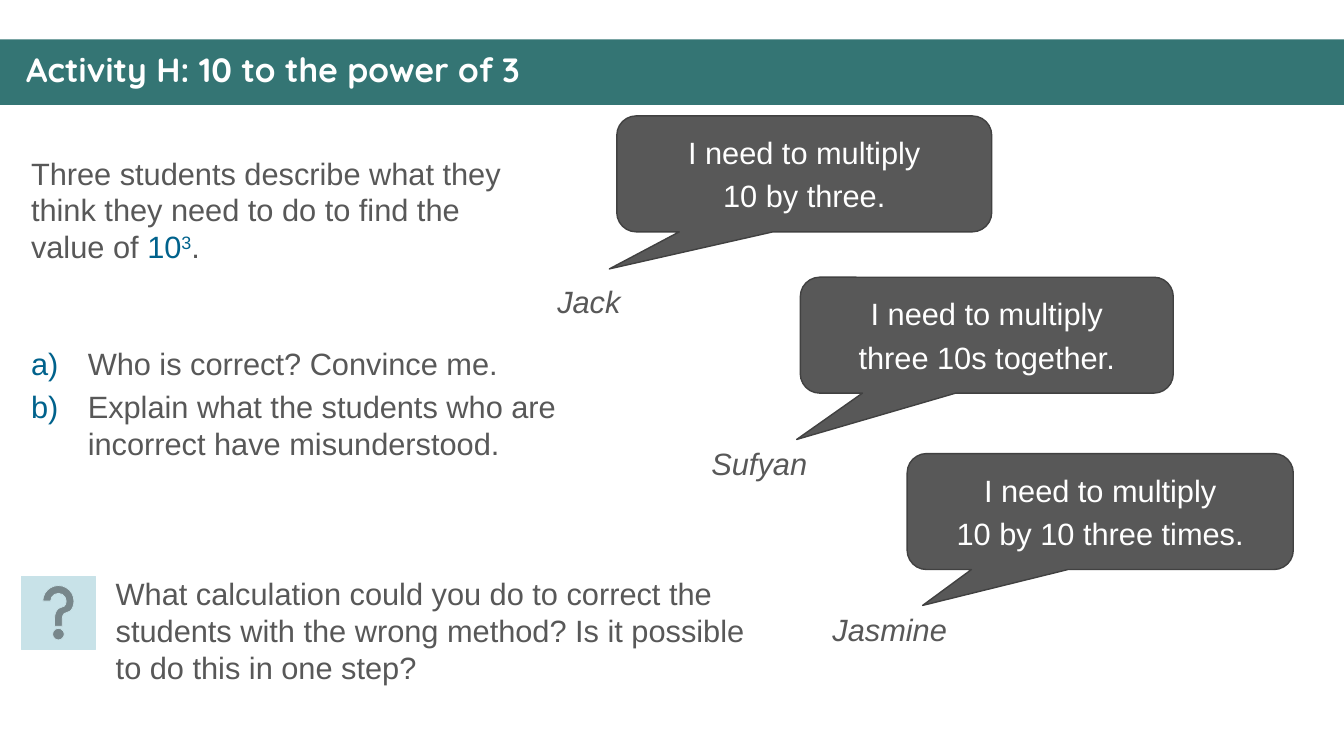
from pptx import Presentation
from pptx.dml.color import RGBColor
from pptx.enum import shapes, text
from pptx.oxml.ns import qn
from pptx.util import Pt
from lxml import etree

# Content
TITLE = "Activity H: 10 to the power of 3"
# speech lines, bubble left/top/width, pointer x/y, speaker, name left/top/width
STUDENTS = [
    (("I need to multiply", "10 by three."), (440.6, 82.8, 267.8),
     (-0.52, 0.82), "Jack", (391, 198.7, 60.5)),
    (("I need to multiply", "three 10s together."), (571.7, 198, 266.4),
     (-0.51, 0.9), "Sufyan", (501.1, 313.9, 83.5)),
    (("I need to multiply", "10 by 10 three times."), (648, 324, 275.8),
     (-0.46, 0.81), "Jasmine", (587.5, 432.7, 97.2)),
]
# each paragraph is a list of (words, colour, baseline) runs
INTRO = [[("Three students describe what they think they need to do to find the value of ", "grey", 0),
          ("10", "blue", 0), ("3", "blue", 30000), (".", "grey", 0)]]
QUESTIONS = [[("Who is correct? Convince me.", "grey", 0)],
             [("Explain what the students who are incorrect have misunderstood.", "grey", 0)]]
EXTENSION = [[("What calculation could you do to correct the students with the wrong method? "
               "Is it possible to do this in one step?", "grey", 0)]]

COLOURS = {"teal": "347574", "grey": "585858", "edge": "414141",
           "blue": "00628C", "pale": "C8E2E8", "white": "FFFFFF"}
BUBBLE_HEIGHT, NAME_HEIGHT = 82.8, 33.8
LIST_INDENT = 40.5
BODY = {"name": "Arial", "size": Pt(22)}

deck = Presentation()
deck.slide_width, deck.slide_height = Pt(960), Pt(540)
slide = deck.slides.add_slide(deck.slide_layouts[5])


def rgb(name):
    return RGBColor.from_string(COLOURS[name])


def add_run(paragraph, words, colour, baseline=0, **fmt):
    run = paragraph.add_run()
    run.text = words
    for key, value in {**BODY, **fmt}.items():
        setattr(run.font, key, value)
    run.font.color.rgb = rgb(colour)
    if baseline:
        run._r.get_or_add_rPr().set("baseline", str(baseline))


def paragraphs(frame, count):
    for number in range(count):
        paragraph = frame.add_paragraph() if number else frame.paragraphs[0]
        paragraph.space_before = Pt(4.4)
        yield paragraph


def add_panel(kind, box, fill, edge=None, width=1):
    panel = slide.shapes.add_shape(kind, *map(Pt, box))
    panel.shadow.inherit = False
    panel.fill.solid()
    panel.fill.fore_color.rgb = rgb(fill)
    if edge:
        panel.line.color.rgb = rgb(edge)
        panel.line.width = Pt(width)
    else:
        panel.line.fill.background()
    return panel


def add_words(box, content, wrap=True, lettered=False, **fmt):
    frame = slide.shapes.add_textbox(*map(Pt, box)).text_frame
    frame.word_wrap = wrap
    for paragraph, runs in zip(paragraphs(frame, len(content)), content):
        for words, colour, baseline in runs:
            add_run(paragraph, words, colour, baseline, **fmt)
        if lettered:
            props = paragraph._p.get_or_add_pPr()
            props.set("marL", str(Pt(LIST_INDENT)))
            props.set("indent", str(-Pt(LIST_INDENT)))
            colour = etree.SubElement(props, qn("a:buClr"))
            etree.SubElement(colour, qn("a:srgbClr"), val=COLOURS["blue"])
            etree.SubElement(props, qn("a:buFont"), typeface="+mj-lt")
            etree.SubElement(props, qn("a:buAutoNum"), type="alphaLcParenR")


# Title on its bar
bar = add_panel(shapes.MSO_SHAPE.RECTANGLE, (0, 28.1, 960, 46.8), "teal")
slide.shapes._spTree.insert(2, bar._element)
title = slide.shapes.title
title.left, title.top, title.width, title.height = map(Pt, (11.5, 34.6, 938.9, 33.8))
title.text_frame.vertical_anchor = text.MSO_ANCHOR.TOP
heading = title.text_frame.paragraphs[0]
heading.alignment = text.PP_ALIGN.LEFT
heading.line_spacing = 0.9
add_run(heading, TITLE, "white", name="Quicksand", size=Pt(24), bold=True)

# Speech bubbles and speakers
for speech, bubble_box, pointer, speaker, (left, top, width) in STUDENTS:
    bubble = add_panel(shapes.MSO_SHAPE.ROUNDED_RECTANGULAR_CALLOUT,
                       (*bubble_box, BUBBLE_HEIGHT), "grey", "edge")
    for number, value in enumerate((*pointer, 0.167)):
        bubble.adjustments[number] = value
    bubble.text_frame.word_wrap = True
    bubble.text_frame.vertical_anchor = text.MSO_ANCHOR.MIDDLE
    for paragraph, words in zip(paragraphs(bubble.text_frame, len(speech)), speech):
        paragraph.alignment = text.PP_ALIGN.CENTER
        add_run(paragraph, words, "white")
    add_words((left, top, width, NAME_HEIGHT), [[(speaker, "grey", 0)]], wrap=False, italic=True)

# Task, questions and extension
add_words((15.1, 106.6, 352.8, 87.1), INTRO)
add_words((15.1, 242.6, 447.8, 92.9), QUESTIONS, lettered=True)
add_panel(shapes.MSO_SHAPE.ACTION_BUTTON_HELP, (15.1, 411.8, 53.3, 51.8), "pale", "pale", 0.5)
add_words((75.6, 406.8, 472.3, 87.1), EXTENSION)

deck.save("out.pptx")
